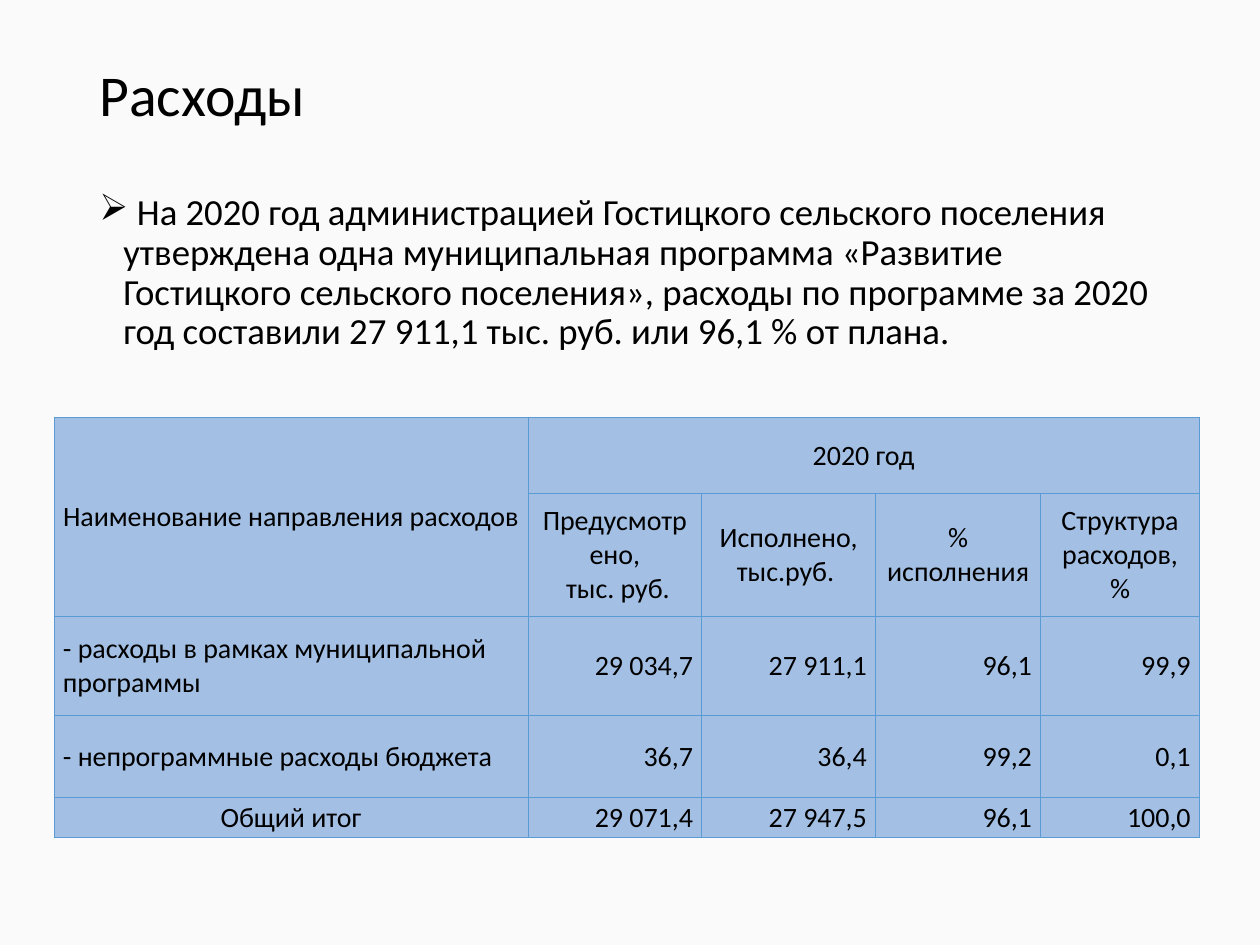
import pptx
import pptx.dml.color
import pptx.enum.text
import pptx.oxml
import pptx.oxml.ns
import pptx.util

Inches, Pt = pptx.util.Inches, pptx.util.Pt
ALIGN = pptx.enum.text.PP_ALIGN
MIDDLE = pptx.enum.text.MSO_ANCHOR.MIDDLE
BORDER = "5B9BD5"


def color(hex_value):
    return pptx.dml.color.RGBColor.from_string(hex_value)


def write(p, text, size):
    r = p.add_run()
    r.text = text
    for name, value in {"name": "Calibri", "size": Pt(size)}.items():
        setattr(r.font, name, value)
    r.font.color.rgb = color("000000")


prs = pptx.Presentation()
prs.slide_width, prs.slide_height = Inches(10), Inches(7.5)
s = prs.slides.add_slide(prs.slide_layouts[6])
s.background.fill.solid()
s.background.fill.fore_color.rgb = color("FAFAFA")

# Title
sp = s.shapes.add_textbox(Inches(0.69), Inches(0.4), Inches(8.62), Inches(0.75))
tf = sp.text_frame
tf.word_wrap = True
tf.vertical_anchor = MIDDLE
p = tf.paragraphs[0]
p.line_spacing = 0.9
write(p, "Расходы", 33)

# Bulleted statement
sp = s.shapes.add_textbox(Inches(0.69), Inches(1.49), Inches(8.62), Inches(5.26))
tf = sp.text_frame
tf.word_wrap = True
p = tf.paragraphs[0]
p.line_spacing = 0.9
pPr = p._p.get_or_add_pPr()
pPr.set("marL", str(Inches(0.19)))
pPr.set("indent", str(-Inches(0.19)))
pPr.append(pptx.oxml.parse_xml(
    f'<a:buChar {pptx.oxml.ns.nsdecls("a")} char="➢"/>'))
write(p, " На 2020 год администрацией Гостицкого сельского поселения утверждена "
         "одна муниципальная программа «Развитие Гостицкого сельского поселения», "
         "расходы по программе за 2020 год составили 27 911,1 тыс. руб. "
         "или 96,1 % от плана.", 21)

# Spending table
col_widths = [3.76, 1.38, 1.38, 1.31, 1.26]
row_heights = [0.61, 0.97, 0.79, 0.65, 0.32]
rows = [
    ["Наименование направления расходов", "2020 год", "", "", ""],
    ["", "Предусмотрено,\n тыс. руб.", "Исполнено, тыс.руб. ", "% исполнения",
     "Структура расходов, %"],
    ["- расходы в рамках муниципальной программы", "29 034,7", "27 911,1", "96,1", "99,9"],
    ["- непрограммные расходы бюджета", "36,7", "36,4", "99,2", "0,1"],
    ["Общий итог", "29 071,4", "27 947,5", "96,1", "100,0"],
]
cell_format = {"vertical_anchor": MIDDLE, "margin_left": Inches(0.07),
               "margin_right": Inches(0.07), "margin_top": 0, "margin_bottom": 0}

table = s.shapes.add_table(len(rows), len(col_widths), Inches(0.43), Inches(3.31),
                           Inches(9.08), Inches(3.34)).table
for column, width in zip(table.columns, col_widths):
    column.width = Inches(width)
for row, height in zip(table.rows, row_heights):
    row.height = Inches(height)
table.cell(0, 0).merge(table.cell(1, 0))
table.cell(0, 1).merge(table.cell(0, 4))

for i, row in enumerate(rows):
    for j, text in enumerate(row):
        cell = table.cell(i, j)
        for name, value in cell_format.items():
            setattr(cell, name, value)
        cell.fill.solid()
        cell.fill.fore_color.rgb = color("A3C0E4")
        tcPr = cell._tc.get_or_add_tcPr()
        for k, side in enumerate(["lnL", "lnR", "lnT", "lnB"]):
            tcPr.insert(k, pptx.oxml.parse_xml(
                f'<a:{side} {pptx.oxml.ns.nsdecls("a")} w="{Pt(0.5)}"><a:solidFill>'
                f'<a:srgbClr val="{BORDER}"/></a:solidFill></a:{side}>'))
        if cell.is_spanned:
            continue
        if i < 2 or (i == 4 and j == 0):
            align = ALIGN.CENTER
        else:
            align = ALIGN.RIGHT if j else ALIGN.LEFT
        tf = cell.text_frame
        for n, line in enumerate(text.split("\n")):
            p = tf.add_paragraph() if n else tf.paragraphs[0]
            p.alignment = align
            write(p, line, 16)

prs.save("out.pptx")
